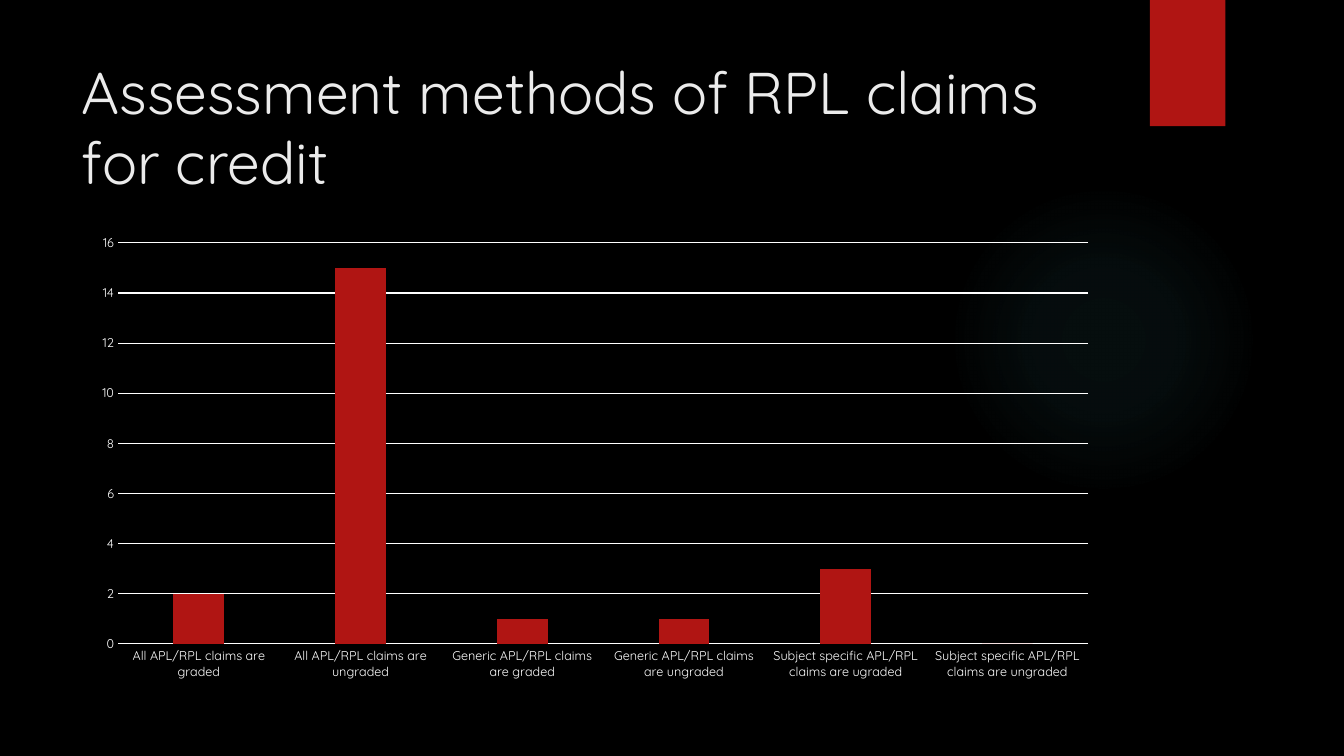
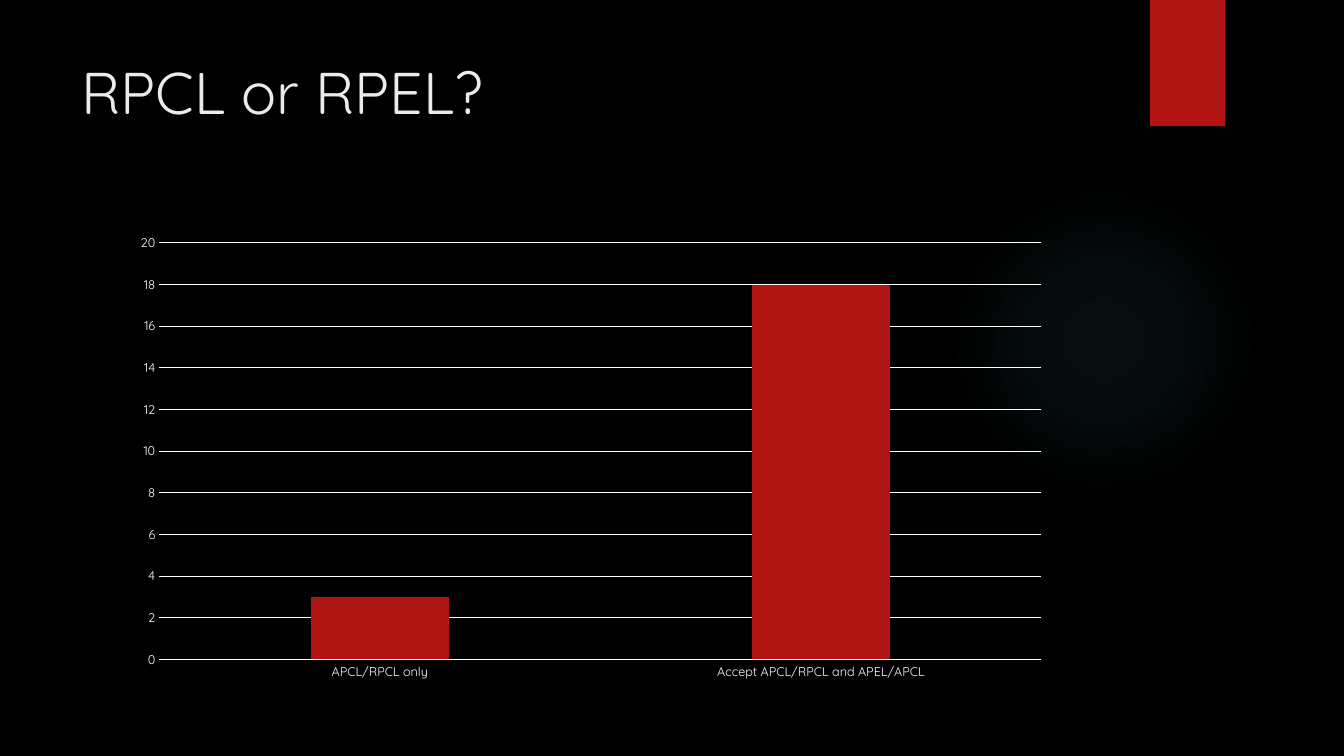
"""Build two dark slides with column charts on recognition of prior learning."""
from pptx import Presentation
from pptx import util as u
from pptx.chart.data import CategoryChartData
from pptx.dml.color import RGBColor
from pptx.enum import chart as ch, shapes, text
from pptx.oxml import parse_xml
from pptx.oxml.ns import nsdecls, qn

BLACK = RGBColor(0x00, 0x00, 0x00)
WHITE = RGBColor(0xFF, 0xFF, 0xFF)
PALE = RGBColor(0xEB, 0xEB, 0xEB)
RED = RGBColor(0xB0, 0x15, 0x13)
TEAL = RGBColor(0x50, 0xB9, 0xC1)
FONT = "Quicksand"
TITLE_FONT = {"name": FONT, "size": u.Pt(42), "bold": False}
CHART_FONT = {"name": FONT, "size": u.Pt(10), "bold": False}
AXIS_FONT = {"name": FONT, "size": u.Pt(9), "bold": False}
GLOW_STOPS = [(0, 7), (36, 6), (69, 0)]

SLIDES = [
    {"title": "Assessment methods of RPL claims for credit",
     "left": 2.06, "width": 25.88, "top_value": 16,
     "data": {"All APL/RPL claims are graded": 2,
              "All APL/RPL claims are ungraded": 15,
              "Generic APL/RPL claims are graded": 1,
              "Generic APL/RPL claims are ungraded": 1,
              "Subject specific APL/RPL claims are ugraded": 3,
              "Subject specific APL/RPL claims are ungraded": 0}},
    {"title": "RPCL or RPEL?",
     "left": 3.07, "width": 23.65, "top_value": 20,
     "data": {"APCL/RPCL only": 3,
              "Accept APCL/RPCL and APEL/APCL": 18}},
]


def set_font(font, values, color):
    for name, value in values.items():
        setattr(font, name, value)
    font.color.rgb = color


def add_plain(s, kind, *box):
    sp = s.shapes.add_shape(kind, *(u.Cm(v) for v in box))
    sp.shadow.inherit = False
    sp.line.fill.background()
    sp.fill.solid()
    sp.fill.fore_color.rgb = RED
    return sp


prs = Presentation()
prs.slide_width, prs.slide_height = u.Cm(33.87), u.Cm(19.05)
layout = prs.slide_layouts[5]
layout.background.fill.solid()
layout.background.fill.fore_color.rgb = BLACK
for ph in list(layout.placeholders):
    if ph.placeholder_format.type == shapes.PP_PLACEHOLDER.TITLE:
        ph.left, ph.top = u.Cm(1.8), u.Cm(1.27)
        ph.width, ph.height = u.Cm(26.14), u.Cm(3.89)
    else:
        layout.shapes.element.remove(ph.element)

for number, item in enumerate(SLIDES):
    s = prs.slides.add_slide(layout)
    if number == 0:
        glow = add_plain(s, shapes.MSO_SHAPE.OVAL, 23.9, 4.65, 7.82, 7.82)
        stops = "".join(
            f'<a:gs pos="{pos * 1000}"><a:srgbClr val="{TEAL}">'
            f'<a:alpha val="{alpha * 1000}"/></a:srgbClr></a:gs>'
            for pos, alpha in GLOW_STOPS)
        props = glow.element.spPr
        props.replace(props.find(qn("a:solidFill")), parse_xml(
            f'<a:gradFill {nsdecls("a")}><a:gsLst>{stops}</a:gsLst><a:path path="circle">'
            '<a:fillToRect l="50000" t="50000" r="50000" b="50000"/></a:path></a:gradFill>'))
        tab = add_plain(s, shapes.MSO_SHAPE.RECTANGLE, 28.98, 0, 1.9, 3.18)
        tab.element.spPr.find(qn("a:effectLst")).append(parse_xml(
            f'<a:outerShdw {nsdecls("a")} blurRad="{u.Pt(3)}" dist="{u.Pt(2)}" dir="5400000">'
            f'<a:srgbClr val="{BLACK}"><a:alpha val="45000"/></a:srgbClr></a:outerShdw>'))
        for sp in (glow, tab):
            layout.shapes.element.append(sp.element)

    tf = s.shapes.title.text_frame
    tf.word_wrap = True
    tf.auto_size = text.MSO_AUTO_SIZE.TEXT_TO_FIT_SHAPE
    tf.vertical_anchor = text.MSO_ANCHOR.TOP
    p = tf.paragraphs[0]
    p.alignment = text.PP_ALIGN.LEFT
    r = p.add_run()
    r.text = item["title"]
    set_font(r.font, TITLE_FONT, PALE)

    data = CategoryChartData()
    data.categories = list(item["data"])
    data.add_series("Series 1", list(item["data"].values()))
    chart = s.shapes.add_chart(
        ch.XL_CHART_TYPE.COLUMN_CLUSTERED, u.Cm(item["left"]), u.Cm(5.69),
        u.Cm(item["width"]), u.Cm(11.66), data).chart
    chart.has_title = chart.has_legend = False
    set_font(chart.font, CHART_FONT, WHITE)
    plot = chart.plots[0]
    plot.vary_by_categories = False
    plot.gap_width, plot.overlap = 219, -27
    fill = plot.series[0].format.fill
    fill.solid()
    fill.fore_color.rgb = RED

    cat_axis, val_axis = chart.category_axis, chart.value_axis
    for axis in (cat_axis, val_axis):
        axis.major_tick_mark = axis.minor_tick_mark = ch.XL_TICK_MARK.NONE
        set_font(axis.tick_labels.font, AXIS_FONT, WHITE)
    val_axis.minimum_scale, val_axis.maximum_scale = 0, item["top_value"]
    val_axis.major_unit = 2
    val_axis.has_major_gridlines = True
    val_axis.format.line.fill.background()
    for line in (cat_axis.format.line, val_axis.major_gridlines.format.line):
        line.color.rgb = WHITE
        line.width = u.Pt(0.75)

prs.save("out.pptx")
